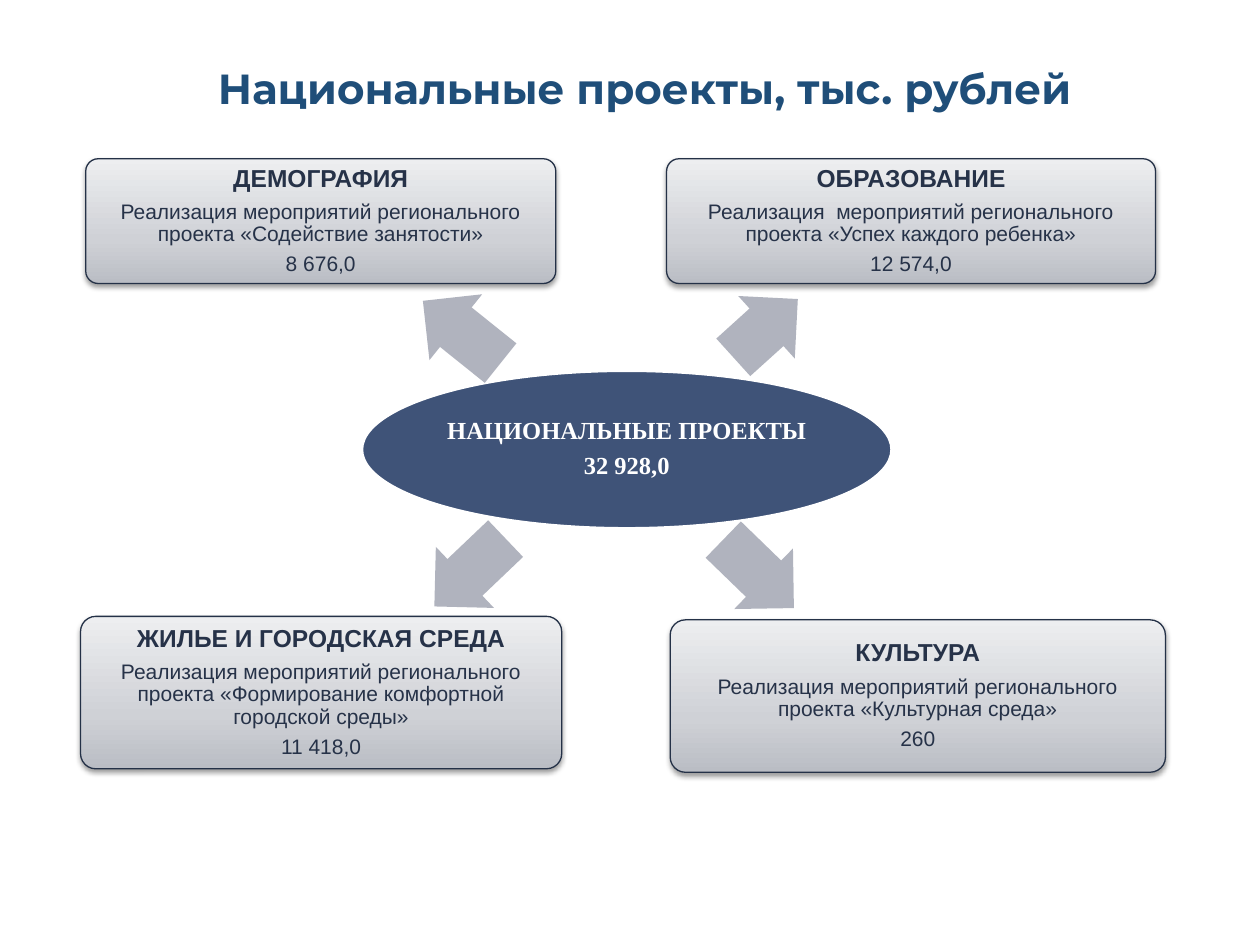
from typing import Any, NamedTuple

from lxml.etree import SubElement
from pptx import Presentation
from pptx.dml.color import RGBColor
from pptx.enum.shapes import MSO_SHAPE as Preset
from pptx.enum.text import MSO_ANCHOR as Anchor, PP_ALIGN as Align
from pptx.oxml.ns import qn
from pptx.util import Pt

WHITE = RGBColor(0xFF, 0xFF, 0xFF)
TITLE_BLUE = RGBColor(0x1F, 0x4E, 0x79)
HUB_BLUE = RGBColor(0x3F, 0x53, 0x78)
ARROW_GREY = RGBColor(0xB0, 0xB3, 0xBE)
CARD_EDGE = RGBColor(0x24, 0x31, 0x47)
CARD_TEXT = RGBColor(0x26, 0x32, 0x48)
SHADOW_BLACK = RGBColor(0x00, 0x00, 0x00)
CARD_STOPS = (
    (0, RGBColor(0xBA, 0xBD, 0xC4)),
    (35, RGBColor(0xCF, 0xD1, 0xD6)),
    (100, RGBColor(0xED, 0xEE, 0xF0)),
)

TITLE_FONT = {"name": "Montserrat", "size": Pt(24), "bold": True}
HUB_FONT = {"name": "Times New Roman", "size": Pt(14), "bold": True}
HEADING_FONT = {"name": "Arial", "size": Pt(14), "bold": True}
BODY_FONT = {"name": "Arial", "size": Pt(12), "bold": False}


class Area(NamedTuple):
    left: float
    top: float
    width: float
    height: float


class Line(NamedTuple):
    words: str
    font: dict[str, Any]


class Project(NamedTuple):
    card: Area
    heading: str
    purpose: str
    amount: str
    arrow: Area
    rotation: float


PROJECTS = (
    Project(Area(46, 352.2, 275, 87.1), "ЖИЛЬЕ И ГОРОДСКАЯ СРЕДА",
            "Реализация мероприятий регионального проекта "
            "«Формирование комфортной городской среды»", "11 418,0",
            Area(240.5, 303.1, 56.2, 48.2), 316.4),
    Project(Area(49, 90.7, 268.6, 71.3), "ДЕМОГРАФИЯ",
            "Реализация мероприятий регионального проекта "
            "«Содействие занятости»", "8 676,0",
            Area(235.4, 165.6, 56.9, 48.2), 38.7),
    Project(Area(380.9, 90.7, 279.4, 71.3), "ОБРАЗОВАНИЕ",
            "Реализация  мероприятий регионального проекта "
            "«Успех каждого ребенка»", "12 574,0",
            Area(412.6, 163.4, 49.7, 48.2), 137.9),
    Project(Area(383, 354.2, 283, 87.1), "КУЛЬТУРА",
            "Реализация мероприятий регионального проекта "
            "«Культурная среда»", "260",
            Area(405.4, 303.8, 56.2, 48.2), 224.1),
)


def in_points(area: Area) -> list[Pt]:
    return [Pt(length) for length in area]


def add_preset(page: Any, preset: Preset, area: Area) -> Any:
    shape = page.shapes.add_shape(preset, *in_points(area))
    shape.shadow.inherit = False
    return shape


def write_lines(box: Any, lines: list[Line], color: RGBColor, inset: float) -> None:
    frame = box.text_frame
    settings = {"word_wrap": True, "vertical_anchor": Anchor.MIDDLE}
    settings |= {f"margin_{side}": Pt(inset) for side in ("left", "top", "right", "bottom")}
    for name, value in settings.items():
        setattr(frame, name, value)
    for index, line in enumerate(lines):
        para = frame.add_paragraph() if index else frame.paragraphs[0]
        spacing = {"alignment": Align.CENTER, "line_spacing": 0.9,
                   "space_after": Pt(line.font["size"].pt * 0.35)}
        for name, value in spacing.items():
            setattr(para, name, value)
        span = para.add_run()
        span.text = line.words
        for name, value in line.font.items():
            setattr(span.font, name, value)
        span.font.color.rgb = color


def fill_card(card: Any) -> None:
    card.fill.gradient()
    properties = card.fill._xPr
    stops = properties.find(".//" + qn("a:gsLst"))
    for stop in list(stops):
        stops.remove(stop)
    for position, color in CARD_STOPS:
        stop = SubElement(stops, qn("a:gs"), pos=str(position * 1000))
        SubElement(stop, qn("a:srgbClr"), val=str(color))
    card.fill.gradient_angle = 90
    effects = properties.find(qn("a:effectLst"))
    shadow = SubElement(effects, qn("a:outerShdw"), blurRad=str(Pt(3.1)),
                        dist=str(Pt(1.6)), dir="5400000", rotWithShape="0")
    tint = SubElement(shadow, qn("a:srgbClr"), val=str(SHADOW_BLACK))
    SubElement(tint, qn("a:alpha"), val="38000")


def add_title(page: Any) -> None:
    box = page.shapes.add_textbox(*in_points(Area(67.7, 32, 601.2, 40)))
    write_lines(box, [Line("Национальные проекты, тыс. рублей", TITLE_FONT)], TITLE_BLUE, 3.6)


def add_hub(page: Any) -> None:
    hub = add_preset(page, Preset.OVAL, Area(206.6, 211.6, 303.2, 90.6))
    hub.fill.solid()
    hub.fill.fore_color.rgb = HUB_BLUE
    hub.line.color.rgb = WHITE
    hub.line.width = Pt(2)
    write_lines(hub, [Line("НАЦИОНАЛЬНЫЕ ПРОЕКТЫ", HUB_FONT), Line("32 928,0", HUB_FONT)],
                WHITE, 0.7)


def add_project(page: Any, project: Project) -> None:
    arrow = add_preset(page, Preset.LEFT_ARROW, project.arrow)
    arrow.adjustments[0] = 0.6
    arrow.adjustments[1] = 0.5
    arrow.rotation = project.rotation
    arrow.fill.solid()
    arrow.fill.fore_color.rgb = ARROW_GREY
    arrow.line.fill.background()

    card = add_preset(page, Preset.ROUNDED_RECTANGLE, project.card)
    card.adjustments[0] = 0.1
    fill_card(card)
    card.line.color.rgb = CARD_EDGE
    card.line.width = Pt(0.75)
    lines = [Line(project.heading, HEADING_FONT), Line(project.purpose, BODY_FONT),
             Line(project.amount, BODY_FONT)]
    write_lines(card, lines, CARD_TEXT, 2.2)


def main() -> None:
    deck = Presentation()
    deck.slide_width, deck.slide_height = Pt(720), Pt(540)
    page = deck.slides.add_slide(deck.slide_layouts[6])
    add_title(page)
    add_hub(page)
    for project in PROJECTS:
        add_project(page, project)
    deck.save("out.pptx")


if __name__ == "__main__":
    main()
